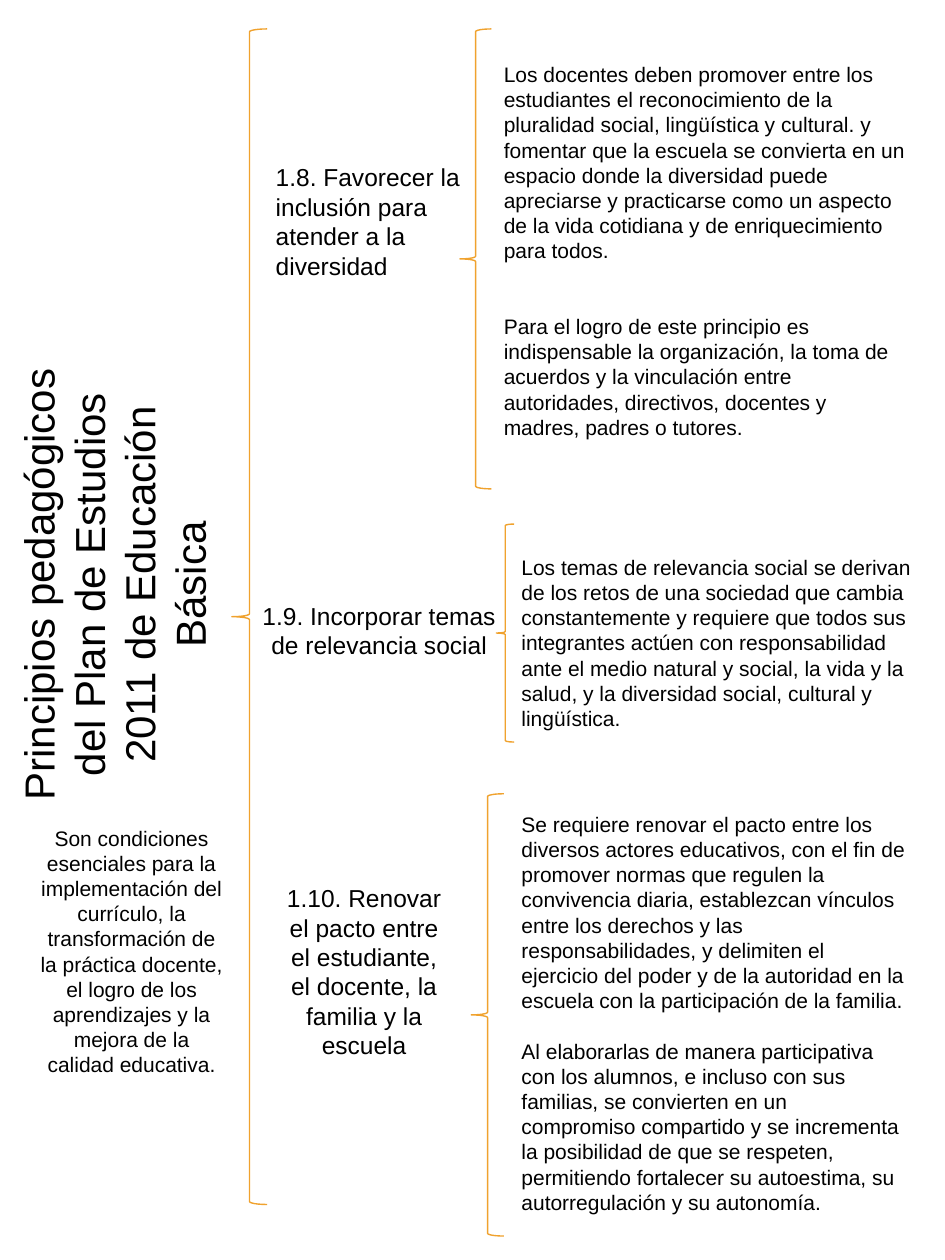
from dataclasses import dataclass

from pptx import Presentation
from pptx.dml.color import RGBColor
from pptx.enum.shapes import MSO_SHAPE
from pptx.enum.text import MSO_ANCHOR, MSO_AUTO_SIZE, PP_ALIGN
from pptx.util import Inches, Pt


@dataclass(frozen=True)
class Theme:
    font: str = "Arial"
    ink: RGBColor = RGBColor(0x00, 0x00, 0x00)
    brace: RGBColor = RGBColor(0xF0, 0xA2, 0x2E)
    brace_width: float = 0.79
    title: int = 24
    principle: int = 14
    body: int = 12
    body_line: float = 14.4  # height of one line of body text


THEME = Theme()

TITLE = "Principios pedagógicos del Plan de Estudios 2011 de Educación Básica"
PURPOSE = (
    "Son condiciones esenciales para la implementación del currículo, la "
    "transformación de la práctica docente, el logro de los aprendizajes y la "
    "mejora de la calidad educativa."
)

# Each principle: heading, its box and alignment, brace box,
# explanation paragraphs, their box, and the gap between them in lines
PRINCIPLES = [
    (
        "1.8. Favorecer la inclusión para atender a la diversidad",
        (2.09, 1.24, 2.1, 1.04), PP_ALIGN.LEFT,
        (3.65, 0.23, 0.25, 3.65),
        [
            "Los docentes deben promover entre los estudiantes el reconocimiento "
            "de la pluralidad social, lingüística y cultural. y fomentar que la "
            "escuela se convierta en un espacio donde la diversidad puede "
            "apreciarse y practicarse como un aspecto de la vida cotidiana y de "
            "enriquecimiento para todos.",
            "Para el logro de este principio es indispensable la organización, la "
            "toma de acuerdos y la vinculación entre autoridades, directivos, "
            "docentes y madres, padres o tutores.",
        ],
        (3.9, 0.44, 3.39, 3.13), 2,
    ),
    (
        "1.9. Incorporar temas de relevancia social",
        (1.98, 4.72, 2.06, 0.57), PP_ALIGN.CENTER,
        (3.94, 4.16, 0.14, 1.73),
        [
            "Los temas de relevancia social se derivan de los retos de una "
            "sociedad que cambia constantemente y requiere que todos sus "
            "integrantes actúen con responsabilidad ante el medio natural y "
            "social, la vida y la salud, y la diversidad social, cultural y "
            "lingüística.",
        ],
        (4.04, 4.35, 3.46, 1.31), 0,
    ),
    (
        "1.10. Renovar el pacto entre el estudiante, el docente, la familia y la "
        "escuela",
        (2.12, 6.96, 1.54, 1.51), PP_ALIGN.CENTER,
        (3.74, 6.3, 0.26, 3.51),
        [
            "Se requiere renovar el pacto entre los diversos actores educativos, "
            "con el fin de promover normas que regulen la convivencia diaria, "
            "establezcan vínculos entre los derechos y las responsabilidades, y "
            "delimiten el ejercicio del poder y de la autoridad en la escuela con "
            "la participación de la familia.",
            "Al elaborarlas de manera participativa con los alumnos, e incluso "
            "con sus familias, se convierten en un compromiso compartido y se "
            "incrementa la posibilidad de que se respeten, permitiendo fortalecer "
            "su autoestima, su autorregulación y su autonomía.",
        ],
        (4.04, 6.39, 3.25, 3.33), 1,
    ),
]


def fill_text(frame, paragraphs, size, align, gap_lines=0):
    frame.text = "\n".join(paragraphs)
    frame.word_wrap = True
    frame.auto_size = MSO_AUTO_SIZE.NONE
    frame.vertical_anchor = MSO_ANCHOR.TOP
    for index, paragraph in enumerate(frame.paragraphs):
        paragraph.alignment = align
        if index:
            paragraph.space_before = Pt(gap_lines * THEME.body_line)
        for run in paragraph.runs:
            run.font.name = THEME.font
            run.font.size = Pt(size)
            run.font.color.rgb = THEME.ink


def add_vertical_title(slide, text, box):
    """Turn the title a quarter left so that it covers the given upright box."""
    left, top, width, height = map(Inches, box)
    title = slide.shapes.title
    # A rotated shape keeps its centre, so its sides are swapped around it
    title.left = left + (width - height) // 2
    title.top = top + (height - width) // 2
    title.width, title.height = height, width
    title.rotation = 270
    fill_text(title.text_frame, [text], THEME.title, PP_ALIGN.CENTER)


def add_text(slide, paragraphs, box, size, align=PP_ALIGN.LEFT, gap_lines=0):
    text_box = slide.shapes.add_textbox(*map(Inches, box))
    fill_text(text_box.text_frame, paragraphs, size, align, gap_lines)


def add_brace(slide, box):
    brace = slide.shapes.add_shape(MSO_SHAPE.LEFT_BRACE, *map(Inches, box))
    brace.shadow.inherit = False
    brace.fill.background()
    brace.line.color.rgb = THEME.brace
    brace.line.width = Pt(THEME.brace_width)


def main():
    deck = Presentation()
    deck.slide_width, deck.slide_height = Inches(7.5), Inches(10)
    slide = deck.slides.add_slide(deck.slide_layouts[5])

    # Topic and its purpose
    add_vertical_title(slide, TITLE, (0.05, 2.77, 1.82, 3.74))
    add_text(slide, [PURPOSE], (0.21, 6.5, 1.67, 2.12), THEME.body, PP_ALIGN.CENTER)
    add_brace(slide, (1.84, 0.23, 0.28, 9.33))

    # Principles with their explanations
    for heading, heading_box, align, brace_box, details, details_box, gap in PRINCIPLES:
        add_text(slide, [heading], heading_box, THEME.principle, align)
        add_brace(slide, brace_box)
        add_text(slide, details, details_box, THEME.body, gap_lines=gap)

    deck.save("out.pptx")


if __name__ == "__main__":
    main()
